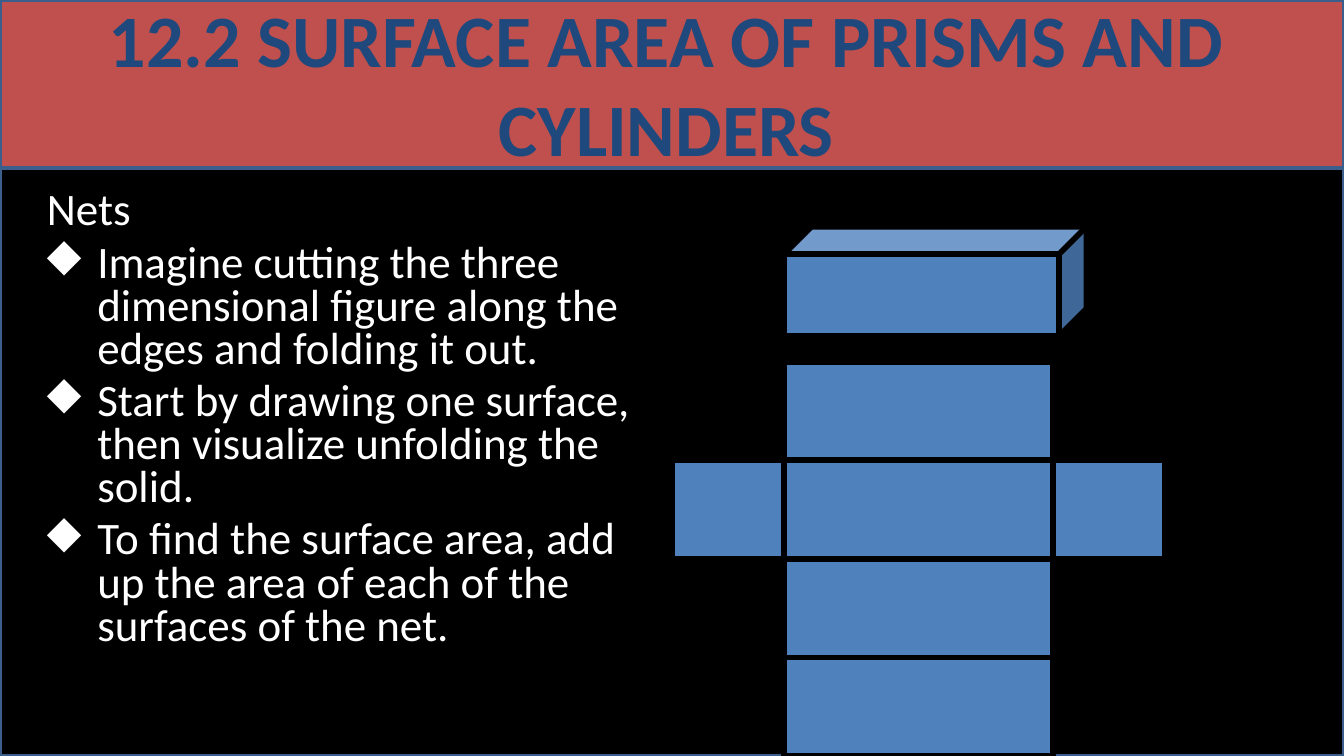
from lxml import etree
from pptx import Presentation
from pptx.dml.color import RGBColor
from pptx.enum import shapes, text
from pptx.oxml import ns
from pptx.util import Pt

TITLE = "12.2 SURFACE AREA OF PRISMS AND CYLINDERS"
HEADING = "Nets"
POINTS = [
    "Imagine cutting the three dimensional figure along the edges and folding it out.",
    "Start by drawing one surface, then visualize unfolding the solid.",
    "To find the surface area, add up the area of each of the surfaces of the net.",
]

BLACK = RGBColor(0, 0, 0)
WHITE = RGBColor(255, 255, 255)
RED = RGBColor(0xC0, 0x50, 0x4D)
NAVY = RGBColor(0x1F, 0x49, 0x7D)
BLUE = RGBColor(0x4F, 0x81, 0xBD)
EDGE = RGBColor(0x3A, 0x5F, 0x8C)

FONT = "Calibri"
WIDTH, HEIGHT, BAND = 720, 405, 90
NET_X, NET_Y = 420, 193.8
FACE_W, END_W, FACE_H = 144, 60, 52.8
FACE_COUNT, END_ROW = 4, 1
INDENT = 27


def add_block(parent, kind, box, fill, line, weight):
    sp = parent.add_shape(kind, *(Pt(v) for v in box))
    sp.shadow.inherit = False
    sp.fill.solid()
    sp.fill.fore_color.rgb = fill
    sp.line.color.rgb = line
    sp.line.width = Pt(weight)
    return sp


def style_run(p, size, color, bold=False):
    f = p.runs[0].font
    f.name, f.size, f.bold = FONT, Pt(size), bold
    f.color.rgb = color


def add_bullet(p):
    pPr = p._p.get_or_add_pPr()
    pPr.set("marL", str(Pt(INDENT)))
    pPr.set("indent", str(-Pt(INDENT)))
    etree.SubElement(pPr, ns.qn("a:buChar"), char="◆")


def add_bands(s):
    rect = shapes.MSO_SHAPE.RECTANGLE
    add_block(s.shapes, rect, (0, BAND, WIDTH, HEIGHT - BAND), BLACK, EDGE, 2)
    add_block(s.shapes, rect, (0, 0, WIDTH, BAND), RED, EDGE, 2)


def add_title(s):
    sp = s.shapes.title
    s.shapes._spTree.append(sp._element)
    sp.left, sp.top, sp.width, sp.height = Pt(18), Pt(16.5), Pt(678), Pt(55.5)
    tf = sp.text_frame
    tf.text = TITLE
    tf.word_wrap = True
    tf.auto_size = text.MSO_AUTO_SIZE.NONE
    tf.vertical_anchor = text.MSO_ANCHOR.MIDDLE
    p = tf.paragraphs[0]
    p.alignment = text.PP_ALIGN.CENTER
    style_run(p, 39.6, NAVY, True)


def add_body(s):
    tf = s.shapes.add_textbox(Pt(18), Pt(99), Pt(336), Pt(263)).text_frame
    tf.word_wrap = True
    tf.text = "\n".join([HEADING] + POINTS)
    for i, p in enumerate(tf.paragraphs):
        p.line_spacing = 0.8
        p.space_before = Pt(4.8)
        style_run(p, 24.1, WHITE)
        if i:
            add_bullet(p)


def add_net(s):
    faces = [(NET_X, NET_Y + i * FACE_H, FACE_W, FACE_H) for i in range(FACE_COUNT)]
    ends = [(x, NET_Y + END_ROW * FACE_H, END_W, FACE_H)
            for x in (NET_X + FACE_W, NET_X - END_W)]
    net = s.shapes.add_group_shape()
    for box in faces + ends:
        add_block(net.shapes, shapes.MSO_SHAPE.RECTANGLE, box, BLUE, BLACK, 3)


prs = Presentation()
prs.slide_width, prs.slide_height = Pt(WIDTH), Pt(HEIGHT)
s = prs.slides.add_slide(prs.slide_layouts[5])
s.background.fill.solid()
s.background.fill.fore_color.rgb = BLACK

add_bands(s)
add_title(s)
add_body(s)
prism = add_block(s.shapes, shapes.MSO_SHAPE.CUBE, (NET_X, 121.5, 162, 58.5), BLUE, BLACK, 3)
prism.adjustments[0] = 0.25
add_net(s)

prs.save("out.pptx")
